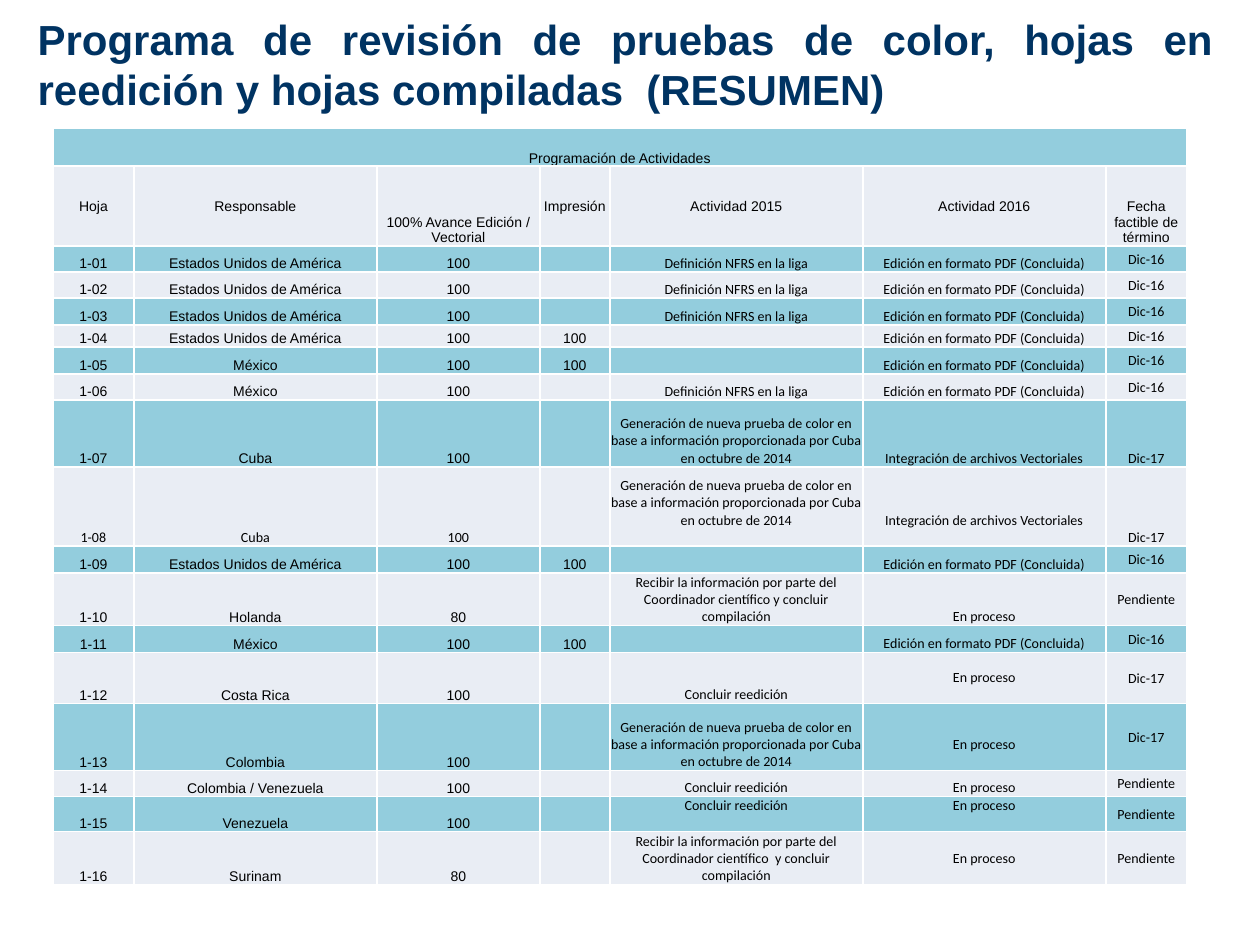
from dataclasses import dataclass
from itertools import cycle

from lxml.etree import SubElement
from pptx import Presentation
from pptx.dml.color import RGBColor
from pptx.enum.text import MSO_ANCHOR as Anchor, MSO_AUTO_SIZE as AutoSize, PP_ALIGN as Align
from pptx.oxml.ns import qn
from pptx.table import Table, _Cell as Cell
from pptx.util import Emu, Pt

NAVY = RGBColor(0x00, 0x33, 0x62)
BLACK = RGBColor(0x00, 0x00, 0x00)
WHITE = RGBColor(0xFF, 0xFF, 0xFF)
BLUE = RGBColor(0x93, 0xCD, 0xDD)
PALE = RGBColor(0xE9, 0xED, 0xF4)

SANS, BODY = "Arial", "Calibri"
PX_PER_INCH = 126
TEXT_SIZE = Pt(8)
LINE = 17

COLUMNS = (81, 243, 163, 70, 253, 243, 81)
HEADINGS = ("Hoja", "Responsable", "100% Avance Edición / Vectorial", "Impresión",
            "Actividad 2015", "Actividad 2016", "Fecha factible de término")
BOTTOM_HEADINGS = (2, 6)
TITLE_ROW, HEADING_ROW = 38, 80

USA = "Estados Unidos de América"
DEFINITION = "Definición NFRS en la liga"
PDF = "Edición en formato PDF (Concluida)"
NEW_PROOF = ("Generación de nueva prueba de color en base a información "
             "proporcionada por Cuba en octubre de 2014")
VECTORS = "Integración de archivos Vectoriales"
RECEIVE = "Recibir la información por parte del Coordinador científico y concluir compilación"
FINISH = "Concluir reedición"
ONGOING = "En proceso"
PENDING = "Pendiente"


@dataclass(frozen=True)
class Sheet:
    height: int
    owner: str
    progress: str
    printed: str
    activity_2015: str
    activity_2016: str
    due: str
    raised: tuple[int, ...] = ()
    font: str = SANS
    due_anchor: Anchor = Anchor.MIDDLE


SHEETS = (
    Sheet(26, USA, "100", "", DEFINITION, PDF, "Dic-16"),
    Sheet(26, USA, "100", "", DEFINITION, PDF, "Dic-16"),
    Sheet(27, USA, "100", "", DEFINITION, PDF, "Dic-16"),
    Sheet(22, USA, "100", "100", "", PDF, "Dic-16"),
    Sheet(27, "México", "100", "100", "", PDF, "Dic-16"),
    Sheet(26, "México", "100", "", DEFINITION, PDF, "Dic-16"),
    Sheet(67, "Cuba", "100", "", NEW_PROOF, VECTORS, "Dic-17", due_anchor=Anchor.BOTTOM),
    Sheet(79, "Cuba", "100", "", NEW_PROOF, VECTORS, "Dic-17", (4, 5), BODY, Anchor.BOTTOM),
    Sheet(27, USA, "100", "100", "", PDF, "Dic-16"),
    Sheet(51, "Holanda", "80", "", RECEIVE, ONGOING, PENDING),
    Sheet(27, "México", "100", "100", "", PDF, "Dic-16"),
    Sheet(51, "Costa Rica", "100", "", FINISH, ONGOING, "Dic-17", (5,)),
    Sheet(67, "Colombia", "100", "", NEW_PROOF, ONGOING, "Dic-17", (5,)),
    Sheet(26, "Colombia / Venezuela", "100", "", FINISH, ONGOING, PENDING),
    Sheet(35, "Venezuela", "100", "", FINISH, ONGOING, PENDING, (4, 5)),
    Sheet(51, "Surinam", "80", "", RECEIVE.replace(" y ", "  y "), ONGOING, PENDING, (5,)),
)


def px(n: int) -> Emu:
    return Emu(round(n * 914400 / PX_PER_INCH))


def add_borders(cell: Cell) -> None:
    tcPr = cell._tc.get_or_add_tcPr()
    for side in ("lnL", "lnR", "lnT", "lnB"):
        ln = SubElement(tcPr, qn(f"a:{side}"), w=str(Pt(1)))
        fill = SubElement(ln, qn("a:solidFill"))
        SubElement(fill, qn("a:srgbClr"), val=str(WHITE))


def format_cell(cell: Cell, text: str, fill: RGBColor, font: str = SANS,
                anchor: Anchor = Anchor.BOTTOM, lift: int = 0) -> None:
    add_borders(cell)
    cell.fill.solid()
    cell.fill.fore_color.rgb = fill
    cell.margin_left = cell.margin_right = cell.margin_top = px(1)
    cell.margin_bottom = px(lift)
    cell.vertical_anchor = anchor
    p = cell.text_frame.paragraphs[0]
    p.alignment = Align.CENTER
    if not text:
        SubElement(p._p, qn("a:endParaRPr"), sz=str(TEXT_SIZE.centipoints))
        return
    p.text = text
    r = p.runs[0]
    r.font.name = font
    r.font.size = TEXT_SIZE
    r.font.color.rgb = BLACK


def fill_headings(table: Table) -> None:
    for i, heading in enumerate(HEADINGS):
        format_cell(table.cell(0, i), "" if i else "Programación de Actividades", BLUE)
        anchor = Anchor.BOTTOM if i in BOTTOM_HEADINGS else Anchor.MIDDLE
        format_cell(table.cell(1, i), heading, PALE, anchor=anchor)
    table.cell(0, 0).merge(table.cell(0, len(HEADINGS) - 1))


def fill_sheet(table: Table, number: int, sheet: Sheet, fill: RGBColor) -> None:
    texts = (f"1-{number:02}", sheet.owner, sheet.progress, sheet.printed,
             sheet.activity_2015, sheet.activity_2016, sheet.due)
    for i, text in enumerate(texts):
        font = sheet.font if i < 4 else BODY
        anchor = sheet.due_anchor if i == 6 else Anchor.BOTTOM
        lift = LINE if i in sheet.raised else 0
        format_cell(table.cell(number + 1, i), text, fill, font, anchor, lift)


def main() -> None:
    prs = Presentation()
    prs.slide_width, prs.slide_height = px(1260), px(945)
    s = prs.slides.add_slide(prs.slide_layouts[5])

    title = s.shapes.title
    title.left, title.top, title.width, title.height = px(25), px(6), px(1201), px(115)
    tf = title.text_frame
    tf.text = "Programa de revisión de pruebas de color, hojas en reedición y hojas compiladas  (RESUMEN)"
    tf.word_wrap = True
    tf.auto_size = AutoSize.NONE
    tf.vertical_anchor = Anchor.MIDDLE
    p = tf.paragraphs[0]
    p.alignment = Align.JUSTIFY
    r = p.runs[0]
    r.font.name = SANS
    r.font.size = Pt(24)
    r.font.bold = True
    r.font.color.rgb = NAVY

    heights = (TITLE_ROW, HEADING_ROW, *(sheet.height for sheet in SHEETS))
    table = s.shapes.add_table(len(heights), len(COLUMNS), px(53), px(128),
                               px(sum(COLUMNS)), px(sum(heights))).table
    table.first_row = table.horz_banding = False
    for column, width in zip(table.columns, COLUMNS):
        column.width = px(width)
    for row, height in zip(table.rows, heights):
        row.height = px(height)

    fill_headings(table)
    for number, (sheet, fill) in enumerate(zip(SHEETS, cycle((BLUE, PALE))), 1):
        fill_sheet(table, number, sheet, fill)

    prs.save("out.pptx")


if __name__ == "__main__":
    main()
